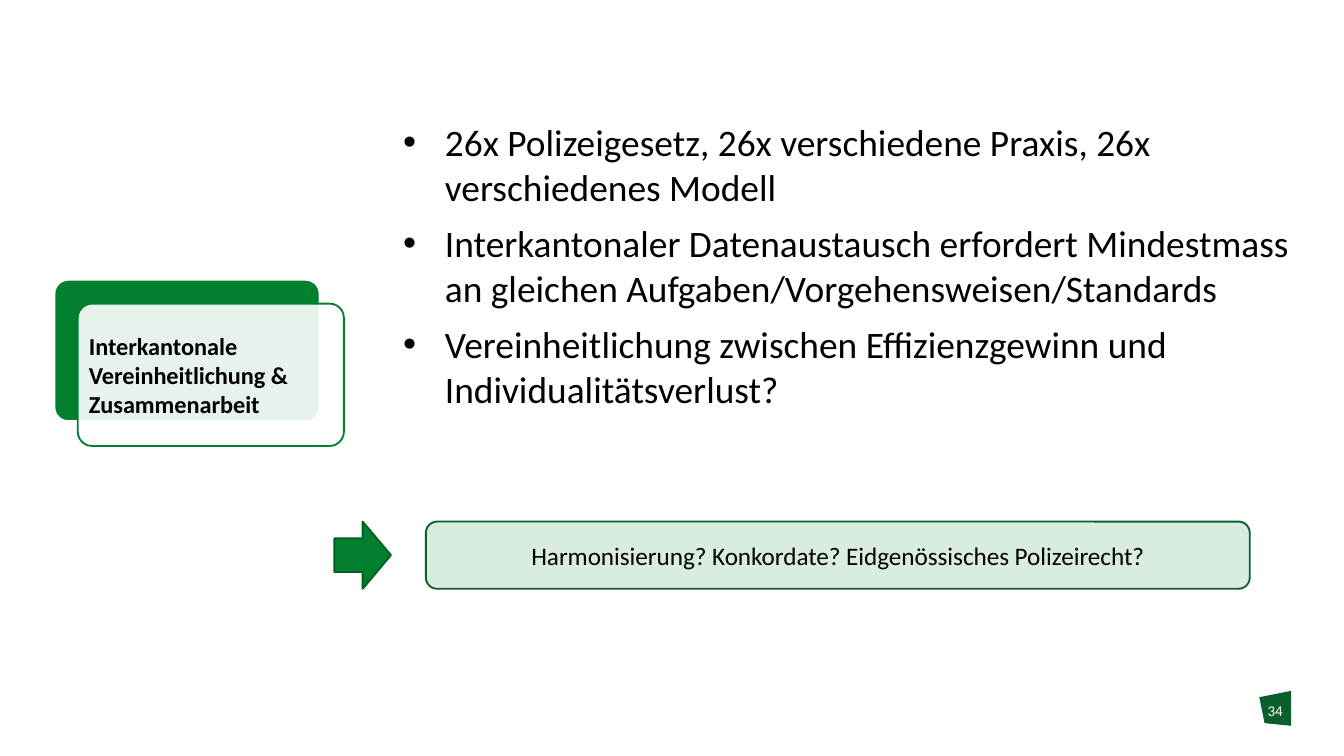
"""Build the slide on inter-cantonal harmonisation of police law."""
from dataclasses import dataclass

from lxml import etree
from pptx import Presentation
from pptx import util as u
from pptx.dml.color import RGBColor
from pptx.enum import shapes, text
from pptx.oxml import ns

COLORS = {
    "green": "00802F",
    "edge": "005F23",
    "dark": "0A5F2D",
    "white": "FFFFFF",
    "black": "000000",
}
FONT = "Calibri"
BULLETS = [
    "26x Polizeigesetz, 26x verschiedene Praxis, 26x verschiedenes Modell",
    "Interkantonaler Datenaustausch erfordert Mindestmass an gleichen "
    "Aufgaben/Vorgehensweisen/Standards",
    "Vereinheitlichung zwischen Effizienzgewinn und Individualitätsverlust?",
]


@dataclass(frozen=True)
class Box:
    left: float
    top: float
    width: float
    height: float

    def lengths(self):
        return [u.Cm(v) for v in (self.left, self.top, self.width, self.height)]


@dataclass(frozen=True)
class Panel:
    kind: shapes.MSO_SHAPE
    box: Box
    fill: str
    line: str
    line_width: float = 1
    opacity: int = 100
    corner: float | None = None


@dataclass(frozen=True)
class Label:
    box: Box
    paragraphs: list[str]
    size: float
    color: str = "black"
    bold: bool = False
    align: text.PP_ALIGN = text.PP_ALIGN.LEFT
    anchor: text.MSO_ANCHOR = text.MSO_ANCHOR.TOP
    inset: float = 0
    bulleted: bool = False
    spacing: int = 0


RECT, ARROW = shapes.MSO_SHAPE.ROUNDED_RECTANGLE, shapes.MSO_SHAPE.RIGHT_ARROW
CARD = Box(1.47, 5.74, 5.03, 2.69)
CALLOUT = Box(8.05, 9.86, 15.57, 1.27)
PANELS = [
    Panel(RECT, Box(1.02, 5.28, 5.03, 2.69), "green", "white", 1.5, corner=0.1),
    Panel(RECT, CARD, "white", "green", opacity=90, corner=0.1),
    Panel(ARROW, Box(6.32, 9.86, 1.07, 1.27), "green", "edge"),
    Panel(RECT, CALLOUT, "green", "dark", opacity=15),
]
LABELS = [
    Label(Box(7.62, 2.26, 16.8, 10), BULLETS, 20, bulleted=True, spacing=6),
    Label(Box(23.8, 13.26, 0.6, 0.76), ["34"], 8, "white", align=text.PP_ALIGN.CENTER),
    Label(Box(1.55, 5.82, 4.87, 2.53), ["Interkantonale Vereinheitlichung & Zusammenarbeit"],
          13, bold=True, anchor=text.MSO_ANCHOR.MIDDLE, inset=0.13),
    Label(CALLOUT, ["Harmonisierung? Konkordate? Eidgenössisches Polizeirecht?"], 13.5,
          align=text.PP_ALIGN.CENTER, anchor=text.MSO_ANCHOR.MIDDLE, inset=0.25),
]
BADGE = [(23.8, 13.18), (24.4, 13.06), (24.4, 13.72), (23.9, 13.67)]


def rgb(name: str) -> RGBColor:
    """Return the named colour."""
    return RGBColor.from_string(COLORS[name])


def draw_panel(slide, panel: Panel) -> None:
    """Draw a filled and outlined preset shape."""
    shape = slide.shapes.add_shape(panel.kind, *panel.box.lengths())
    shape.shadow.inherit = False
    if panel.corner is not None:
        shape.adjustments[0] = panel.corner
    shape.fill.solid()
    shape.fill.fore_color.rgb = rgb(panel.fill)
    if panel.opacity < 100:
        color = shape.fill._xPr.find(".//" + ns.qn("a:srgbClr"))
        etree.SubElement(color, ns.qn("a:alpha"), val=str(panel.opacity * 1000))
    shape.line.color.rgb = rgb(panel.line)
    shape.line.width = u.Pt(panel.line_width)


def draw_badge(slide) -> None:
    """Draw the slanted badge behind the page number."""
    points = [(u.Cm(x), u.Cm(y)) for x, y in BADGE]
    builder = slide.shapes.build_freeform(*points[0])
    builder.add_line_segments(points[1:], close=True)
    badge = builder.convert_to_shape()
    badge.shadow.inherit = False
    badge.fill.solid()
    badge.fill.fore_color.rgb = rgb("dark")
    badge.line.fill.background()


def add_bullet(paragraph) -> None:
    """Give a paragraph a hanging bullet."""
    properties = paragraph._p.get_or_add_pPr()
    indent = u.Cm(0.79)
    properties.set("marL", str(indent))
    properties.set("indent", str(-indent))
    etree.SubElement(properties, ns.qn("a:buFont"), typeface="Arial")
    etree.SubElement(properties, ns.qn("a:buChar"), char="•")


def draw_label(slide, label: Label) -> None:
    """Draw a wrapped text box."""
    frame = slide.shapes.add_textbox(*label.box.lengths()).text_frame
    frame.word_wrap = True
    frame.vertical_anchor = label.anchor
    frame.margin_left = frame.margin_right = u.Cm(label.inset)
    frame.margin_top = frame.margin_bottom = u.Cm(label.inset)
    frame.text = "\n".join(label.paragraphs)
    for paragraph in frame.paragraphs:
        paragraph.alignment = label.align
        paragraph.space_after = u.Pt(label.spacing)
        if label.bulleted:
            add_bullet(paragraph)
        paragraph.font.name = FONT
        paragraph.font.size = u.Pt(label.size)
        paragraph.font.bold = label.bold
        paragraph.font.color.rgb = rgb(label.color)


def main() -> None:
    """Build and save the presentation."""
    presentation = Presentation()
    presentation.slide_width, presentation.slide_height = u.Cm(25.4), u.Cm(14.29)
    slide = presentation.slides.add_slide(presentation.slide_layouts[6])
    draw_badge(slide)
    for panel in PANELS:
        draw_panel(slide, panel)
    for label in LABELS:
        draw_label(slide, label)
    presentation.save("out.pptx")


if __name__ == "__main__":
    main()
